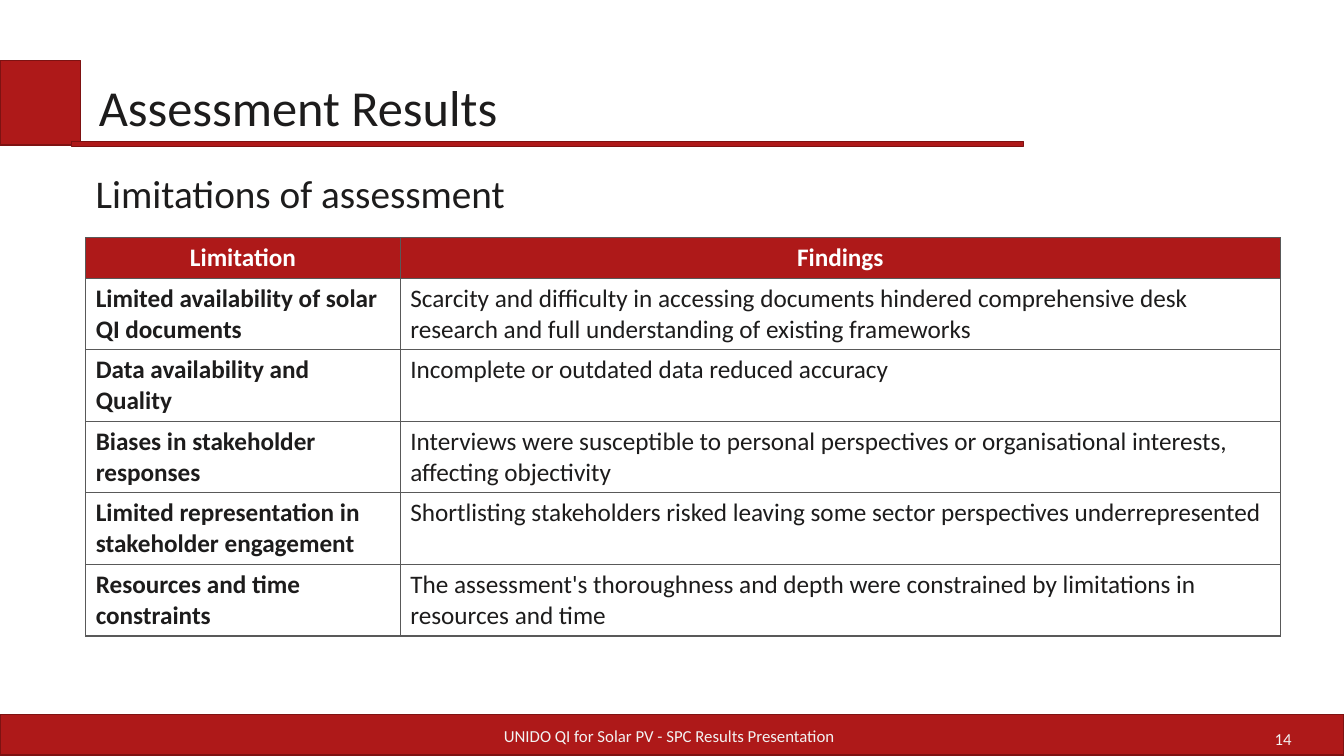
import pptx
import pptx.dml.color
import pptx.enum.shapes
import pptx.enum.text
import pptx.oxml
import pptx.oxml.ns
import pptx.util
from pptx.util import Inches

RGBColor = pptx.dml.color.RGBColor
ALIGN = pptx.enum.text.PP_ALIGN
ANCHOR = pptx.enum.text.MSO_ANCHOR

RED = RGBColor(0xAE, 0x19, 0x19)
DARK_RED = RGBColor(0x7E, 0x12, 0x12)
INK = RGBColor(0x1D, 0x1C, 0x1C)
PALE = RGBColor(0xF2, 0xF2, 0xF2)
WHITE = RGBColor(0xFF, 0xFF, 0xFF)
GRID = RGBColor(0x59, 0x59, 0x59)

HEADINGS = ("Limitation", "Findings")
LIMITATIONS = [
    ("Limited availability of solar QI documents",
     "Scarcity and difficulty in accessing documents hindered comprehensive desk "
     "research and full understanding of existing frameworks"),
    ("Data availability and Quality",
     "Incomplete or outdated data reduced accuracy"),
    ("Biases in stakeholder responses",
     "Interviews were susceptible to personal perspectives or organisational "
     "interests, affecting objectivity"),
    ("Limited representation in stakeholder engagement",
     "Shortlisting stakeholders risked leaving some sector perspectives underrepresented"),
    ("Resources and time constraints",
     "The assessment's thoroughness and depth were constrained by limitations in "
     "resources and time"),
]


def write_text(frame, text, *, size, color=INK, bold=False, align=ALIGN.LEFT):
    """Fill the first paragraph of a text frame and return it."""
    para = frame.paragraphs[0]
    para.alignment = align
    span = para.add_run()
    span.text = text
    span.font.name = "Calibri"
    span.font.size = pptx.util.Pt(size)
    span.font.bold = bold
    span.font.color.rgb = color
    return para


def add_text(page, text, left, top, width, height, *, anchor=ANCHOR.TOP,
             side_inset=0.13, end_inset=0.13, **text_format):
    box = page.shapes.add_textbox(Inches(left), Inches(top), Inches(width), Inches(height))
    frame = box.text_frame
    frame.word_wrap = True
    frame.vertical_anchor = anchor
    frame.margin_left = frame.margin_right = Inches(side_inset)
    frame.margin_top = frame.margin_bottom = Inches(end_inset)
    return write_text(frame, text, **text_format)


def add_red_block(page, left, top, width, height):
    block = page.shapes.add_shape(
        pptx.enum.shapes.MSO_SHAPE.RECTANGLE,
        Inches(left), Inches(top), Inches(width), Inches(height))
    block.shadow.inherit = False
    block.fill.solid()
    block.fill.fore_color.rgb = RED
    block.line.color.rgb = DARK_RED
    block.line.width = pptx.util.Pt(0.85)


def set_borders(cell):
    """Draw a one-point line on each side of the cell."""
    properties = cell._tc.get_or_add_tcPr()
    for position, side in enumerate(("lnL", "lnR", "lnT", "lnB")):
        line = pptx.oxml.parse_xml(
            f'<a:{side} {pptx.oxml.ns.nsdecls("a")} w="12700"><a:solidFill>'
            f'<a:srgbClr val="{GRID}"/></a:solidFill></a:{side}>')
        properties.insert(position, line)


def add_limitations_table(page):
    rows = [HEADINGS] + LIMITATIONS
    table = page.shapes.add_table(
        len(rows), len(HEADINGS),
        Inches(0.85), Inches(2.36), Inches(11.85), Inches(3.95)).table
    table.horz_banding = False
    for column, width in zip(table.columns, (3.12, 8.73)):
        column.width = Inches(width)
    for row_index, texts in enumerate(rows):
        is_heading = row_index == 0
        table.rows[row_index].height = Inches(0.4 if is_heading else 0.71)
        for column_index, text in enumerate(texts):
            cell = table.cell(row_index, column_index)
            if is_heading:
                cell.fill.solid()
                cell.fill.fore_color.rgb = RED
            else:
                cell.fill.background()
            set_borders(cell)
            write_text(cell.text_frame, text, size=18,
                       color=WHITE if is_heading else INK,
                       bold=is_heading or column_index == 0,
                       align=ALIGN.CENTER if is_heading else ALIGN.LEFT)


def main():
    deck = pptx.Presentation()
    deck.slide_width = Inches(13.33)
    deck.slide_height = Inches(7.5)
    page = deck.slides.add_slide(deck.slide_layouts[6])

    add_red_block(page, 0, 7.09, 13.33, 0.4)
    add_red_block(page, 0, 0.6, 0.8, 0.84)
    add_red_block(page, 0.71, 1.4, 9.44, 0.05)

    add_text(page, "14", 9.77, 7.13, 3.14, 0.4, size=12, color=PALE, align=ALIGN.RIGHT,
             anchor=ANCHOR.MIDDLE, side_inset=0.1, end_inset=0.05)
    add_text(page, "Assessment Results", 0.85, 0.63, 8.41, 0.86, size=36)
    subtitle = add_text(page, "Limitations of assessment", 0.82, 1.48, 5.37, 0.61, size=28)
    subtitle.line_spacing = 1.15
    add_text(page, "UNIDO QI for Solar PV - SPC Results Presentation", 3.61, 7.1, 6.06, 0.4,
             size=12, color=PALE, align=ALIGN.CENTER, anchor=ANCHOR.MIDDLE,
             side_inset=0.1, end_inset=0.1)
    add_limitations_table(page)

    deck.save("out.pptx")


if __name__ == "__main__":
    main()
